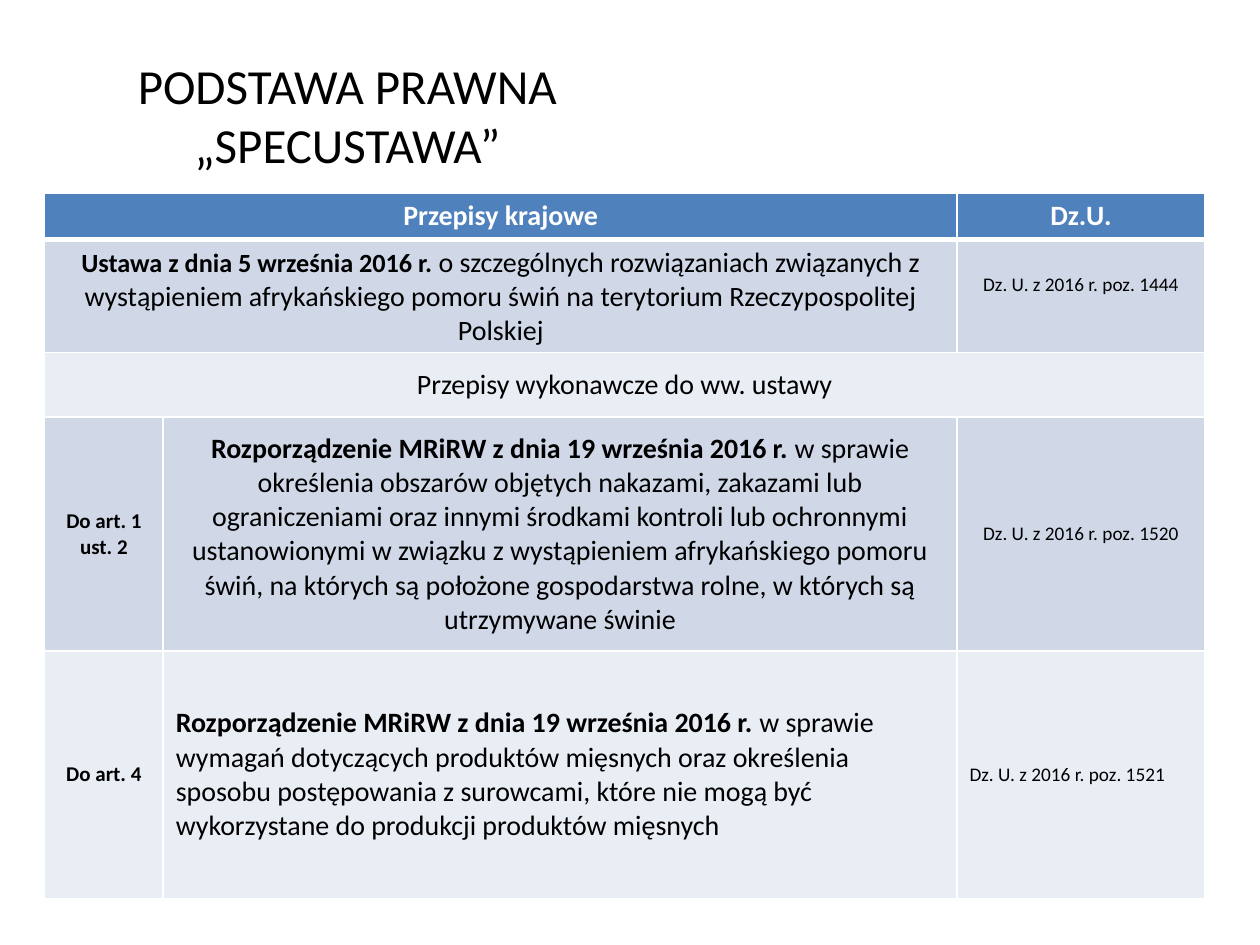
from dataclasses import dataclass

import pptx
import pptx.dml.color
import pptx.enum.text
import pptx.oxml
import pptx.oxml.ns
import pptx.util

Cm = pptx.util.Cm
Pt = pptx.util.Pt
CENTER = pptx.enum.text.PP_ALIGN.CENTER
LEFT = pptx.enum.text.PP_ALIGN.LEFT
MIDDLE = pptx.enum.text.MSO_ANCHOR.MIDDLE


@dataclass(frozen=True)
class Theme:
    font: str = "Calibri"
    black: str = "000000"
    white: str = "FFFFFF"
    header: str = "4F81BD"
    dark_band: str = "D0D8E8"
    light_band: str = "E9EDF4"
    title: int = 28
    body: int = 16
    act: int = 15
    article: int = 12
    journal: int = 11


THEME = Theme()
COLUMN_WIDTHS = (2.39, 16, 5)
ROW_HEIGHTS = (0.89, 2.16, 1.3, 4.72, 4.98)
ROW_FILLS = (THEME.header, THEME.dark_band, THEME.light_band,
             THEME.dark_band, THEME.light_band)
REGULATION = "Rozporządzenie MRiRW z dnia 19 września 2016 r. "


def add_run(paragraph, text, size, bold=False, color=THEME.black):
    run = paragraph.add_run()
    run.text = text
    run.font.name = THEME.font
    run.font.size = Pt(size)
    run.font.bold = bold
    run.font.color.rgb = pptx.dml.color.RGBColor.from_string(color)


def add_title(slide, lines):
    box = slide.shapes.add_textbox(Cm(1.3), Cm(0.91), Cm(11.4), Cm(2.8))
    frame = box.text_frame
    frame.word_wrap = True
    frame.vertical_anchor = MIDDLE
    paragraph = frame.paragraphs[0]
    paragraph.alignment = CENTER
    for index, line in enumerate(lines):
        if index:
            paragraph.add_line_break()
        add_run(paragraph, line, THEME.title)


def set_borders(cell, widths):
    """Draw white borders; widths maps L, R, T and B to points."""
    properties = cell._tc.get_or_add_tcPr()
    for side, width in widths.items():
        properties.append(pptx.oxml.parse_xml(
            f'<a:ln{side} {pptx.oxml.ns.nsdecls("a")} w="{Pt(width)}">'
            f'<a:solidFill><a:srgbClr val="{THEME.white}"/></a:solidFill>'
            f'</a:ln{side}>'))


def add_grid(slide):
    """Add the empty table with its bands and borders."""
    table = slide.shapes.add_table(
        len(ROW_HEIGHTS), len(COLUMN_WIDTHS), Cm(0.9), Cm(3.89),
        Cm(sum(COLUMN_WIDTHS)), Cm(sum(ROW_HEIGHTS))).table
    for column, width in zip(table.columns, COLUMN_WIDTHS):
        column.width = Cm(width)
    for index, (row, height, color) in enumerate(
            zip(table.rows, ROW_HEIGHTS, ROW_FILLS)):
        row.height = Cm(height)
        for cell in row.cells:
            set_borders(cell, {"L": 1, "R": 1, "T": 3 if index == 1 else 1,
                               "B": 3 if index == 0 else 1})
            cell.fill.solid()
            cell.fill.fore_color.rgb = pptx.dml.color.RGBColor.from_string(color)
    return table


def fill_cell(table, row, column, runs, span=1, alignment=CENTER):
    """Write runs of (text, size, bold, color) in a cell, merged over span columns."""
    cell = table.cell(row, column)
    if span > 1:
        cell.merge(table.cell(row, column + span - 1))
    cell.vertical_anchor = MIDDLE
    paragraph = cell.text_frame.paragraphs[0]
    paragraph.alignment = alignment
    for run in runs:
        add_run(paragraph, *run)
    return cell


def fill_table(table):
    fill_cell(table, 0, 0, [("Przepisy krajowe", THEME.body, True, THEME.white)], span=2)
    fill_cell(table, 0, 2, [("Dz.U.", THEME.body, True, THEME.white)])

    fill_cell(table, 1, 0, [
        ("Ustawa z dnia 5 września 2016 r. ", THEME.act, True),
        ("o szczególnych rozwiązaniach związanych z wystąpieniem afrykańskiego "
         "pomoru świń na terytorium Rzeczypospolitej Polskiej", THEME.body)], span=2)
    act_journal = fill_cell(table, 1, 2, [("Dz. U. z 2016 r. poz. 1444", THEME.journal)])
    act_journal.margin_bottom = Cm(0.58)

    fill_cell(table, 2, 0, [("Przepisy wykonawcze do ww. ustawy", THEME.body)], span=3)

    regulations = (
        ("Do art. 1 ust. 2",
         "w sprawie określenia obszarów objętych nakazami, zakazami lub "
         "ograniczeniami oraz innymi środkami kontroli lub ochronnymi "
         "ustanowionymi w związku z wystąpieniem afrykańskiego pomoru świń, "
         "na których są położone gospodarstwa rolne, w których są utrzymywane świnie",
         "Dz. U. z 2016 r. poz. 1520", CENTER),
        ("Do art. 4",
         "w sprawie wymagań dotyczących produktów mięsnych oraz określenia "
         "sposobu postępowania z surowcami, które nie mogą być wykorzystane "
         "do produkcji produktów mięsnych",
         "Dz. U. z 2016 r. poz. 1521", LEFT),
    )
    for row, (article, subject, journal, alignment) in enumerate(regulations, start=3):
        fill_cell(table, row, 0, [(article, THEME.article, True)])
        fill_cell(table, row, 1, [(REGULATION, THEME.body, True),
                                  (subject, THEME.body)], alignment=alignment)
        fill_cell(table, row, 2, [(journal, THEME.journal)], alignment=alignment)


def main():
    presentation = pptx.Presentation()
    presentation.slide_width = Cm(25.4)
    presentation.slide_height = Cm(19.05)
    slide = presentation.slides.add_slide(presentation.slide_layouts[6])
    add_title(slide, ("PODSTAWA PRAWNA", "„SPECUSTAWA”"))
    fill_table(add_grid(slide))
    presentation.save("out.pptx")


if __name__ == "__main__":
    main()
